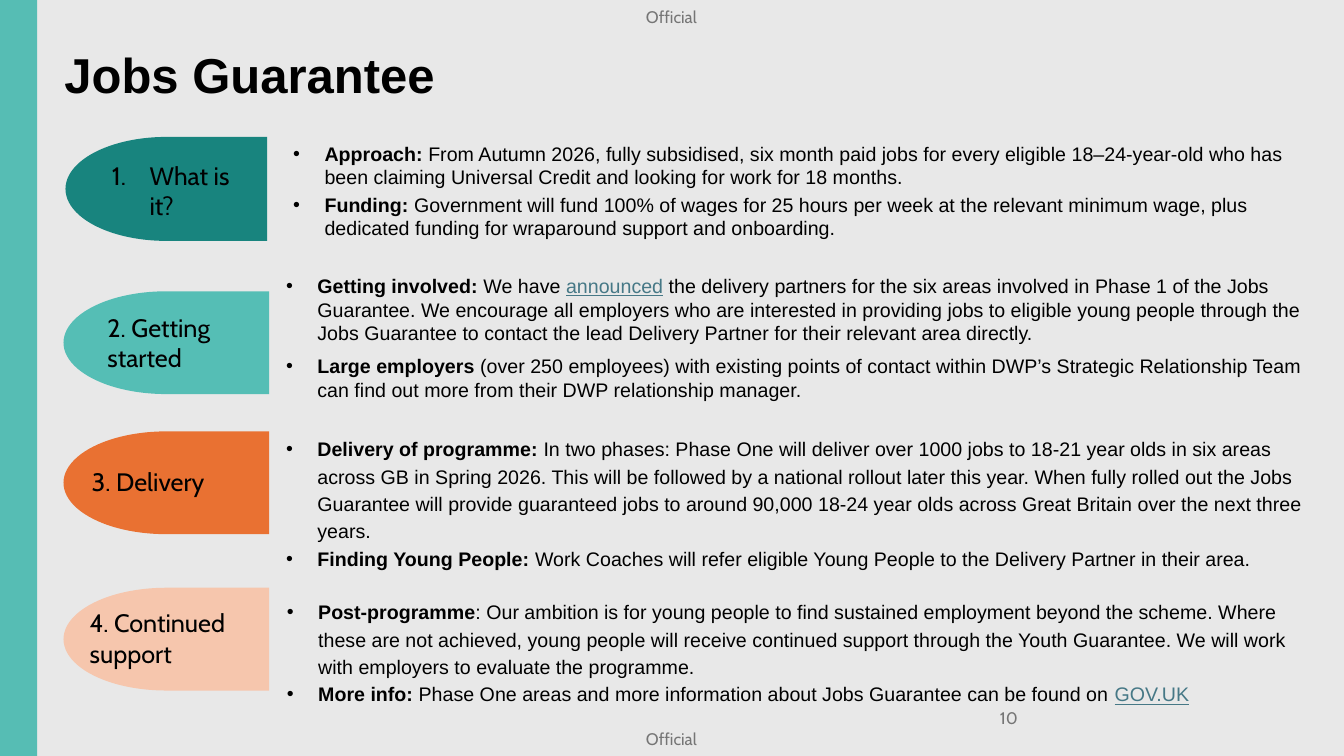
from lxml import etree
from pptx import Presentation
from pptx.dml.color import RGBColor
from pptx.enum.shapes import MSO_SHAPE
from pptx.enum.text import MSO_ANCHOR, MSO_AUTO_SIZE, PP_ALIGN
from pptx.oxml.ns import qn
from pptx.util import Cm, Pt

RECT = MSO_SHAPE.RECTANGLE
DELAY = MSO_SHAPE.FLOWCHART_DELAY
MIDDLE = MSO_ANCHOR.MIDDLE
LEFT = PP_ALIGN.LEFT
FIXED = MSO_AUTO_SIZE.NONE

BLACK = "000000"
GREY = "757575"
LINK = "467886"

TABS = [
    (1.65, 3.45, 5.08, 2.62, "18847E"),
    (1.6, 7.34, 5.18, 2.59, "55BEB5"),
    (1.6, 10.87, 5.18, 2.59, "E97132"),
    (1.6, 14.81, 5.18, 2.59, "F6C6AD"),
]

LABELS = [
    (2.57, 3.91, 4.09, 1.8, "What is it?", True),
    (2.46, 7.75, 4.09, 1.8, "2. Getting started", False),
    (2.06, 11.63, 5.08, 1.02, "3. Delivery", False),
    (2.01, 15.19, 5.08, 1.8, "4. Continued support", False),
]

BODIES = [
    (7.14, 3.45, 26.14, 3.0, 2.8, None, [
        [("Approach: ", "b"),
         ("From Autumn 2026, fully subsidised, six month paid jobs for every "
          "eligible 18–24-year-old who has been claiming Universal Credit and "
          "looking for work for 18 months.", "")],
        [("Funding: ", "b"),
         ("Government will fund 100% of wages for 25 hours per week at the "
          "relevant minimum wage, plus dedicated funding for wraparound support "
          "and onboarding.", "")],
    ]),
    (6.96, 6.78, 26.19, 3.56, 7, None, [
        [("Getting involved: ", "b"), ("We have ", ""), ("announced", "u"),
         (" the delivery partners for the six areas involved in Phase 1 of the "
          "Jobs Guarantee. We encourage all employers who are interested in "
          "providing jobs to eligible young people through the Jobs Guarantee to "
          "contact the lead Delivery Partner for their relevant area directly.", "")],
        [("Large employers", "b"),
         (" (over 250 employees) with existing points of contact within DWP’s "
          "Strategic Relationship Team can find out more from their DWP "
          "relationship manager.", "")],
    ]),
    (6.96, 10.8, 26.31, 3.76, 0, 19.5, [
        [("Delivery of programme: ", "b"),
         ("In two phases: Phase One will deliver over 1000 jobs to 18-21 year "
          "olds in six areas across GB in Spring 2026. This will be followed by a "
          "national rollout later this year. When fully rolled out the Jobs "
          "Guarantee will provide guaranteed jobs to around 90,000 18-24 year olds "
          "across Great Britain over the next three years.", "")],
        [("Finding Young People: ", "b"),
         ("Work Coaches will refer eligible Young People to the Delivery Partner "
          "in their area.", "")],
    ]),
    (6.98, 14.91, 25.81, 3.07, 0, 19.5, [
        [("Post-programme", "b"),
         (": Our ambition is for young people to find sustained employment beyond "
          "the scheme. Where these are not achieved, young people will receive "
          "continued support through the Youth Guarantee. We will work with "
          "employers to evaluate the programme.", "")],
        [("More info: ", "b"),
         ("Phase One areas and more information about Jobs Guarantee can be found "
          "on ", ""),
         ("GOV.UK", "u")],
    ]),
]


def paint(color, tone):
    color.rgb = RGBColor.from_string(tone)


def add_run(para, text, size, face, tone=BLACK, bold=False, line=False):
    run = para.add_run()
    run.text = text
    font = run.font
    font.size = Pt(size)
    font.name = face
    font.bold = bold
    font.underline = line
    paint(font.color, tone)


def add_mark(para, indent, tag, **attrs):
    props = para._p.get_or_add_pPr()
    props.set("marL", str(Cm(indent)))
    props.set("indent", str(-Cm(indent)))
    if tag == "a:buChar":
        etree.SubElement(props, qn("a:buFont"), typeface="Arial")
    etree.SubElement(props, qn(tag), **attrs)


def add_shape(slide, kind, left, top, width, height, tone, turn=0):
    shape = slide.shapes.add_shape(kind, Cm(left), Cm(top), Cm(width), Cm(height))
    shape.shadow.inherit = False
    shape.rotation = turn
    shape.fill.solid()
    paint(shape.fill.fore_color, tone)
    shape.line.fill.background()


def add_box(slide, left, top, width, height, inset=None):
    box = slide.shapes.add_textbox(Cm(left), Cm(top), Cm(width), Cm(height))
    frame = box.text_frame
    frame.word_wrap = True
    if inset is not None:
        frame.margin_left = frame.margin_right = Cm(inset)
        frame.margin_top = frame.margin_bottom = Cm(inset)
    return frame


def add_title(slide, text):
    title = slide.shapes.title
    title.left, title.top = Cm(1.37), Cm(0.97)
    title.width, title.height = Cm(31.93), Cm(1.8)
    frame = title.text_frame
    frame.auto_size = FIXED
    frame.vertical_anchor = MIDDLE
    para = frame.paragraphs[0]
    para.alignment = LEFT
    add_run(para, text, 35, "Arial", bold=True)


def add_label(slide, left, top, width, height, text, count):
    para = add_box(slide, left, top, width, height).paragraphs[0]
    if count:
        add_mark(para, 0.95, "a:buAutoNum", type="arabicPeriod")
    add_run(para, text, 18, "Cabin")


def add_body(slide, left, top, width, height, gap, pitch, items):
    frame = add_box(slide, left, top, width, height)
    for i, item in enumerate(items):
        para = frame.add_paragraph() if i else frame.paragraphs[0]
        add_mark(para, 0.79, "a:buChar", char="•")
        if i:
            para.space_before = Pt(gap)
        if pitch:
            para.line_spacing = Pt(pitch)
        for text, style in item:
            link = style == "u"
            add_run(para, text, 14, "Arial", LINK if link else BLACK,
                    style == "b", link)


def main():
    deck = Presentation()
    deck.slide_width, deck.slide_height = Cm(33.87), Cm(19.05)
    slide = deck.slides.add_slide(deck.slide_layouts[5])
    slide.background.fill.solid()
    paint(slide.background.fill.fore_color, "E8E8E8")

    add_shape(slide, RECT, 0, 0, 0.94, 19.05, "56BDB4")
    for top in (0.18, 18.36):
        mark = add_box(slide, 16.28, top, 1.42, 0.51, 0)
        add_run(mark.paragraphs[0], "Official", 12, "Cabin", GREY)
    page = add_box(slide, 25.07, 17.58, 7.9, 1.02, 0.13)
    page.vertical_anchor = MIDDLE
    add_run(page.paragraphs[0], "10", 12, "Cabin", GREY)

    add_title(slide, "Jobs Guarantee")
    for tab in TABS:
        add_shape(slide, DELAY, *tab, turn=180)
    for label in LABELS:
        add_label(slide, *label)
    for body in BODIES:
        add_body(slide, *body)
    deck.save("out.pptx")


if __name__ == "__main__":
    main()
